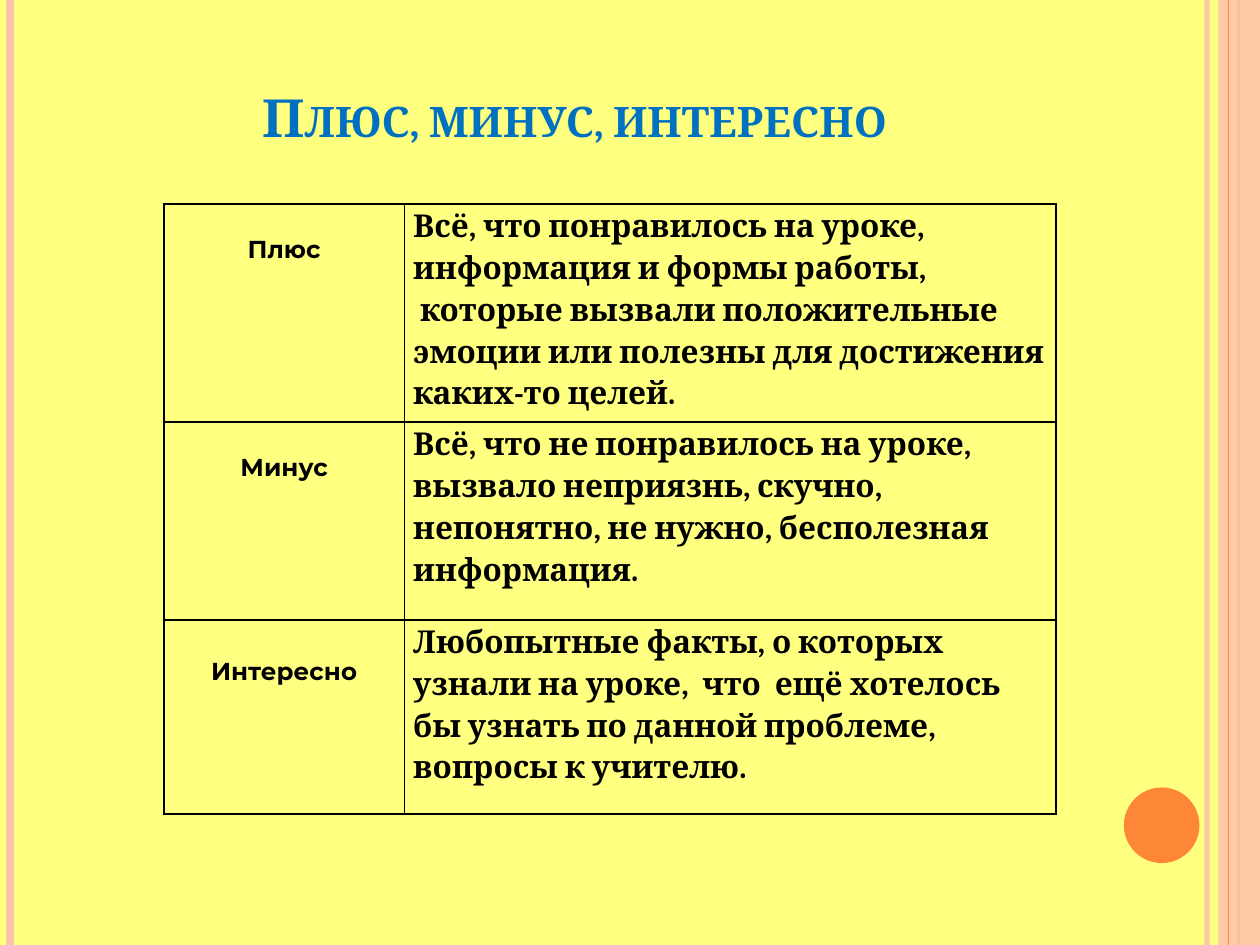
from lxml import etree
from pptx import Presentation
from pptx.dml.color import RGBColor
from pptx.enum import shapes, text
from pptx.oxml.ns import qn
from pptx.util import Inches, Pt

PEACH, ORANGE, BLACK = "FEC3AE", "FE8637", "000000"
ROWS = [
    ("Плюс", 1.73, 0.21, [
        "Всё, что понравилось на уроке, информация и формы работы,",
        " которые вызвали положительные эмоции или полезны для достижения каких-то целей."]),
    ("Минус", 1.57, 0.21, [
        "Всё, что не понравилось на уроке, вызвало неприязнь, скучно, "
        "непонятно, не нужно, бесполезная информация."]),
    ("Интересно", 1.54, 0.26, [
        "Любопытные факты, о которых узнали на уроке,  что  ещё хотелось "
        "бы узнать по данной проблеме, вопросы к учителю."]),
]


def rgb(value):
    return RGBColor.from_string(value)


def set_alpha(fill_parent, percent):
    color = fill_parent.find(".//" + qn("a:srgbClr"))
    etree.SubElement(color, qn("a:alpha")).set("val", str(percent * 1000))


def style(paragraph, font_name, size, color, align):
    paragraph.alignment = align
    font = paragraph.font
    font.name, font.size, font.bold = font_name, Pt(size), True
    font.color.rgb = rgb(color)


def add_stripe(slide, x, height, color, width, alpha=100):
    stripe = slide.shapes.add_connector(
        shapes.MSO_CONNECTOR.STRAIGHT, Inches(x), 0, Inches(x), Inches(height))
    stripe.line.color.rgb = rgb(color)
    stripe.line.width = Pt(width)
    properties = stripe._element.spPr
    if alpha < 100:
        set_alpha(properties, alpha)
    etree.SubElement(properties, qn("a:effectLst"))


def add_solid(slide, kind, left, top, width, height, color):
    solid = slide.shapes.add_shape(
        kind, Inches(left), Inches(top), Inches(width), Inches(height))
    solid.shadow.inherit = False
    solid.fill.solid()
    solid.fill.fore_color.rgb = rgb(color)
    solid.line.fill.background()
    return solid


def add_decoration(slide, width, height):
    """Side stripes, right band and the round page marker."""
    add_stripe(slide, width - 0.42, height, PEACH, 3, 93)
    add_stripe(slide, 0.08, height, PEACH, 4.5)
    add_stripe(slide, width - 0.17, height, ORANGE, 1.5)
    band = add_solid(slide, shapes.MSO_SHAPE.RECTANGLE, width - 0.33, 0, 0.33, height, PEACH)
    set_alpha(band._element.spPr, 87)
    add_stripe(slide, width - 0.25, height, ORANGE, 0.75)
    add_solid(slide, shapes.MSO_SHAPE.OVAL, width - 1.08, height - 1.25, 0.6, 0.6, ORANGE)


def add_title(slide, left, top, width, height):
    title = slide.shapes.title
    title.left, title.top = Inches(left), Inches(top)
    title.width, title.height = Inches(width), Inches(height)
    frame = title.text_frame
    frame.text = "Плюс, минус, интересно"
    frame.vertical_anchor = text.MSO_ANCHOR.MIDDLE
    heading = frame.paragraphs[0]
    style(heading, "Cambria", 30, "0070C0", text.PP_ALIGN.CENTER)
    heading._p.pPr.find(qn("a:defRPr")).set("cap", "small")


def add_borders(cell):
    properties = cell._tc.get_or_add_tcPr()
    for side in "LRTB":
        border = etree.SubElement(properties, qn("a:ln" + side), w=str(Pt(1)))
        fill = etree.SubElement(border, qn("a:solidFill"))
        etree.SubElement(fill, qn("a:srgbClr"), val=BLACK)


def fill_cell(cell, lines, font_name, size, align, top=0):
    add_borders(cell)
    cell.fill.background()
    cell.margin_left = cell.margin_right = Inches(0.07)
    cell.margin_top, cell.margin_bottom = Inches(top), 0
    cell.text_frame.text = "\n".join(lines)
    for paragraph in cell.text_frame.paragraphs:
        paragraph.line_spacing = 1.15
        style(paragraph, font_name, size, BLACK, align)


def add_reflection_table(slide, left, top, column_widths):
    height = sum(row[1] for row in ROWS)
    table = slide.shapes.add_table(
        len(ROWS), len(column_widths), Inches(left), Inches(top),
        Inches(sum(column_widths)), Inches(height)).table
    table.first_row = table.horz_banding = False
    for column, width in zip(table.columns, column_widths):
        column.width = Inches(width)
    for index, (label, row_height, label_top, meaning) in enumerate(ROWS):
        table.rows[index].height = Inches(row_height)
        fill_cell(table.cell(index, 0), [label], "Montserrat", 14,
                  text.PP_ALIGN.CENTER, label_top)
        fill_cell(table.cell(index, 1), meaning, "Cambria", 18, text.PP_ALIGN.LEFT)


def main():
    width, height = 10, 7.5
    deck = Presentation()
    deck.slide_width, deck.slide_height = Inches(width), Inches(height)
    slide = deck.slides.add_slide(deck.slide_layouts[5])
    slide.background.fill.solid()
    slide.background.fill.fore_color.rgb = rgb("FFFF80")
    add_decoration(slide, width, height)
    add_reflection_table(slide, 1.3, 1.62, [1.91, 5.17])
    add_title(slide, 0.5, 0.62, 8.12, 0.61)
    deck.save("out.pptx")


if __name__ == "__main__":
    main()
